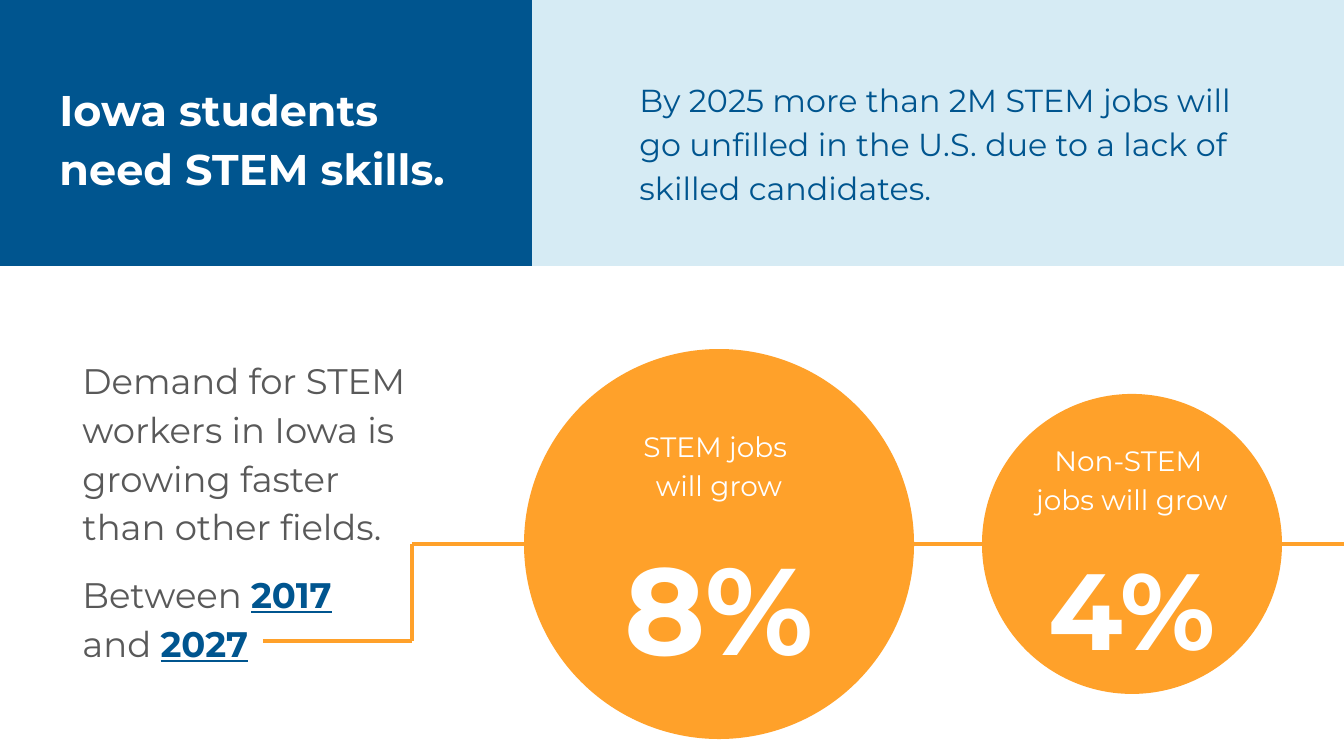
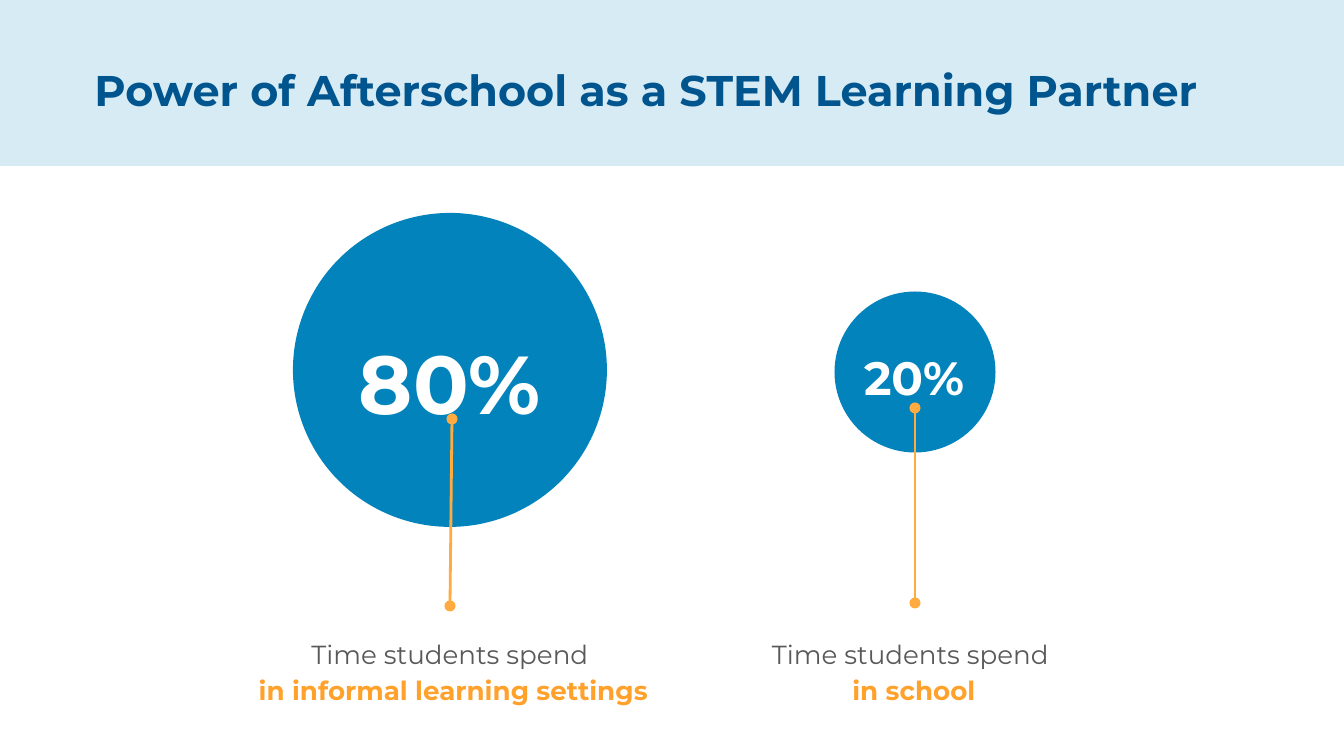
from lxml import etree
from pptx import Presentation
from pptx.dml.color import RGBColor
from pptx.enum.shapes import MSO_CONNECTOR, MSO_SHAPE
from pptx.enum.text import MSO_ANCHOR, MSO_AUTO_SIZE, PP_ALIGN
from pptx.oxml.ns import qn
from pptx.util import Emu, Inches, Pt

FONT = "Montserrat"
COLORS = {
    "navy": "00558F",
    "blue": "0383BC",
    "pale": "D6EBF4",
    "orange": "FFA12A",
    "amber": "FFAB40",
    "gray": "595959",
    "white": "FFFFFF",
}
WIDTH, HEIGHT = 1344, 756
PX = Inches(10) / WIDTH

# A paragraph is a list of runs; a run is a string or (string, colour) for bold emphasis.
SKILLS_TITLE = "Iowa students need STEM skills."
CALLOUT = ("By 2025 more than 2M STEM jobs will go unfilled in the U.S. "
           "due to a lack of skilled candidates.")
DEMAND = [
    ["Demand for STEM workers in Iowa is growing faster than other fields."],
    ["Between ", ("2017", "navy"), " \nand ", ("2027", "navy")],
]
GROWTH = [
    {"center": 719, "size": 390, "caption": "STEM jobs \nwill grow", "caption_top": 411,
     "value": "8%", "value_top": 497, "pt": 66},
    {"center": 1132, "size": 300, "caption": "Non-STEM \njobs will grow", "caption_top": 425,
     "value": "4%", "value_top": 509, "pt": 58},
]
GROWTH_AXIS = 544
GROWTH_TEXT_WIDTH = 342

PARTNER_TITLE = "Power of Afterschool as a STEM Learning Partner"
TIME_SHARES = [
    {"center": (450, 370), "size": 314, "value": "80%", "pt": 44, "value_box": (310, 304, 280, 108),
     "pointer": (452, 419, 450, 606), "caption_box": (228, 620, 444, 89),
     "caption": ["Time students spend\n ", ("in informal learning settings", "orange")]},
    {"center": (915, 372), "size": 161, "value": "20%", "pt": 25, "value_box": (841, 327, 146, 73),
     "pointer": (915, 408, 915, 603), "caption_box": (727, 620, 374, 89),
     "caption": ["Time students spend \n", ("in school", "orange")]},
]


def px(*values):
    return [Emu(round(v * PX)) for v in values]


def rgb(name):
    return RGBColor.from_string(COLORS[name])


def add_shape(slide, kind, box, color):
    sp = slide.shapes.add_shape(kind, *px(*box))
    sp.shadow.inherit = False
    sp.fill.solid()
    sp.fill.fore_color.rgb = rgb(color)
    sp.line.fill.background()


def add_circle(slide, cx, cy, size, color):
    add_shape(slide, MSO_SHAPE.OVAL, (cx - size / 2, cy - size / 2, size, size), color)


def add_line(slide, ends, color, width, dots=False):
    line = slide.shapes.add_connector(MSO_CONNECTOR.STRAIGHT, *px(*ends))
    line.line.color.rgb = rgb(color)
    line.line.width = Pt(width)
    if dots:
        ln = line.line._get_or_add_ln()
        for tag in ("a:headEnd", "a:tailEnd"):
            etree.SubElement(ln, qn(tag), type="oval")
    etree.SubElement(line.element.spPr, qn("a:effectLst"))


def add_runs(p, runs):
    for run in runs:
        text, accent = (run, None) if isinstance(run, str) else run
        for i, part in enumerate(text.split("\n")):
            if i:
                p.add_line_break()
            if part:
                r = p.add_run()
                r.text = part
                if accent:
                    r.font.bold = True
                    r.font.color.rgb = rgb(accent)


def write(sp, paragraphs, size, color, bold=False, align=PP_ALIGN.LEFT):
    tf = sp.text_frame
    tf.word_wrap = True
    tf.auto_size = MSO_AUTO_SIZE.NONE
    tf.vertical_anchor = MSO_ANCHOR.TOP
    tf.margin_left = tf.margin_right = tf.margin_top = tf.margin_bottom = Inches(0.1)
    for i, runs in enumerate(paragraphs):
        p = tf.add_paragraph() if i else tf.paragraphs[0]
        p.alignment = align
        p.line_spacing = 1.15
        p.space_before = Pt(10 if i else 0)
        p.font.name = FONT
        p.font.size = Pt(size)
        p.font.bold = bold
        p.font.color.rgb = rgb(color)
        add_runs(p, runs)


def add_text(slide, box, runs, size, color, bold=False):
    sp = slide.shapes.add_textbox(*px(*box))
    write(sp, [runs], size, color, bold, PP_ALIGN.CENTER)


def fill_placeholder(sp, box, paragraphs, size, color, bold=False):
    """Move a placeholder to box, in front of the bands, and write unbulleted text."""
    sp.left, sp.top, sp.width, sp.height = px(*box)
    sp.element.getparent().append(sp.element)
    write(sp, paragraphs, size, color, bold)
    for p in sp.text_frame.paragraphs:
        pPr = p._p.get_or_add_pPr()
        pPr.set("marL", "0")
        pPr.set("indent", "0")
        bullet = etree.Element(qn("a:buNone"))
        pPr.find(qn("a:defRPr")).addprevious(bullet)


def add_title(slide, box, text, color):
    fill_placeholder(slide.shapes.title, box, [[text]], 23, color, bold=True)


def build_skills(prs):
    slide = prs.slides.add_slide(prs.slide_layouts.get_by_name("Two Content"))
    _, callout, demand = slide.placeholders
    elbow, start_y = 412, 641
    add_line(slide, (elbow, GROWTH_AXIS, WIDTH, GROWTH_AXIS), "orange", 2.25)
    add_shape(slide, MSO_SHAPE.RECTANGLE, (532, 0, WIDTH - 532, 266), "pale")
    add_shape(slide, MSO_SHAPE.RECTANGLE, (0, 0, 532, 266), "navy")
    add_title(slide, (46, 62, 430, 194), SKILLS_TITLE, "white")
    fill_placeholder(callout, (626, 62, 645, 167), [[CALLOUT]], 17, "navy")
    fill_placeholder(demand, (69, 339, 376, 325), DEMAND, 19, "gray")
    for g in GROWTH:
        add_circle(slide, g["center"], GROWTH_AXIS, g["size"], "orange")
        left = g["center"] - GROWTH_TEXT_WIDTH / 2
        add_text(slide, (left, g["caption_top"], GROWTH_TEXT_WIDTH, 77), [g["caption"]], 15, "white")
        add_text(slide, (left, g["value_top"], GROWTH_TEXT_WIDTH, 132), [g["value"]],
                 g["pt"], "white", bold=True)
    add_line(slide, (263, start_y, elbow, start_y), "orange", 2.25)
    add_line(slide, (elbow, start_y, elbow, GROWTH_AXIS), "orange", 2.25)


def build_partner(prs):
    slide = prs.slides.add_slide(prs.slide_layouts.get_by_name("Title Only"))
    add_shape(slide, MSO_SHAPE.RECTANGLE, (0, 0, WIDTH, 166), "pale")
    add_title(slide, (81, 42, 1183, 79), PARTNER_TITLE, "navy")
    for share in TIME_SHARES:
        add_circle(slide, *share["center"], share["size"], "blue")
        add_text(slide, share["value_box"], [share["value"]], share["pt"], "white", bold=True)
        add_line(slide, share["pointer"], "amber", 1.5, dots=True)
        add_text(slide, share["caption_box"], share["caption"], 14, "gray")


def main():
    prs = Presentation()
    prs.slide_width, prs.slide_height = px(WIDTH, HEIGHT)
    build_skills(prs)
    build_partner(prs)
    # The years in the demand text are underlined as well as bold.
    demand = prs.slides[0].placeholders[2]
    for r in demand.text_frame.paragraphs[1].runs:
        if r.font.bold:
            r.font.underline = True
    prs.save("out.pptx")


if __name__ == "__main__":
    main()
